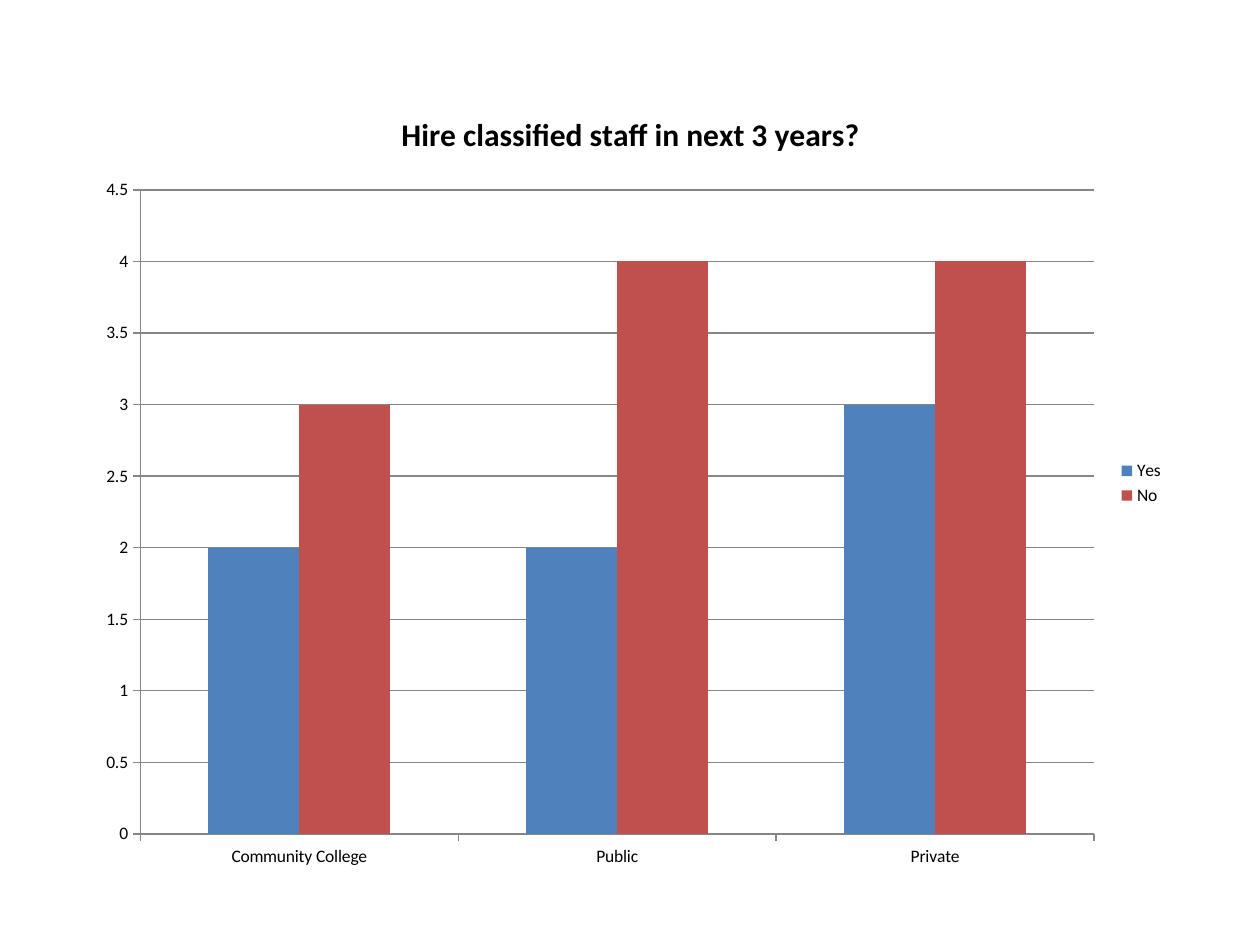
from pptx import Presentation
from pptx.chart.data import CategoryChartData
from pptx.dml.color import RGBColor
from pptx.enum.chart import XL_CHART_TYPE, XL_LEGEND_POSITION, XL_TICK_MARK
from pptx.util import Inches, Pt

CLUSTERED = XL_CHART_TYPE.COLUMN_CLUSTERED
LEGEND_RIGHT = XL_LEGEND_POSITION.RIGHT
TICK_OUTSIDE = XL_TICK_MARK.OUTSIDE

FONT = "Calibri"
BLACK, GRAY = "000000", "868686"
CATEGORIES = ["Community College", "Public", "Private"]
ANSWERS = [("Yes", (2, 2, 3), "4F81BD"), ("No", (3, 4, 4), "C0504D")]


def color(hex_value):
    return RGBColor.from_string(hex_value)


def format_font(font, size=10, bold=False, hex_value=BLACK):
    font.name = FONT
    font.size = Pt(size)
    font.bold = bold
    font.color.rgb = color(hex_value)


def add_title(chart, text, **font_format):
    chart.has_title = True
    tf = chart.chart_title.text_frame
    r = tf.paragraphs[0].add_run()
    r.text = text
    format_font(r.font, **font_format)
    chart.chart_title.include_in_layout = False


def format_line(line, hex_value=GRAY, width=0.75):
    line.color.rgb = color(hex_value)
    line.width = Pt(width)


def format_axis(axis, gridlines=False):
    axis.major_tick_mark = TICK_OUTSIDE
    axis.has_major_gridlines = gridlines
    format_line(axis.format.line)
    format_font(axis.tick_labels.font)
    if gridlines:
        format_line(axis.major_gridlines.format.line)


def add_column_chart(slide, left, top, width, height):
    data = CategoryChartData()
    data.categories = CATEGORIES
    for name, values, _ in ANSWERS:
        data.add_series(name, values)
    chart = slide.shapes.add_chart(CLUSTERED, left, top, width, height, data).chart
    format_font(chart.font)

    # Columns
    plot = chart.plots[0]
    plot.vary_by_categories = False
    plot.gap_width = 150
    plot.overlap = 0
    for series, (_, _, fill) in zip(plot.series, ANSWERS):
        series.format.fill.solid()
        series.format.fill.fore_color.rgb = color(fill)

    # Axes
    format_axis(chart.category_axis)
    format_axis(chart.value_axis, gridlines=True)
    chart.value_axis.minimum_scale = 0
    chart.value_axis.maximum_scale = 4.5
    chart.value_axis.major_unit = 0.5

    # Legend
    chart.has_legend = True
    chart.legend.position = LEGEND_RIGHT
    chart.legend.include_in_layout = False
    format_font(chart.legend.font)
    return chart


def main():
    prs = Presentation()
    prs.slide_width, prs.slide_height = Inches(10), Inches(7.5)
    s = prs.slides.add_slide(prs.slide_layouts[6])
    chart = add_column_chart(s, Inches(0.67), Inches(0.67), Inches(8.67), Inches(6.33))
    add_title(chart, "Hire classified staff in next 3 years?", size=18, bold=True)
    prs.save("out.pptx")


if __name__ == "__main__":
    main()
